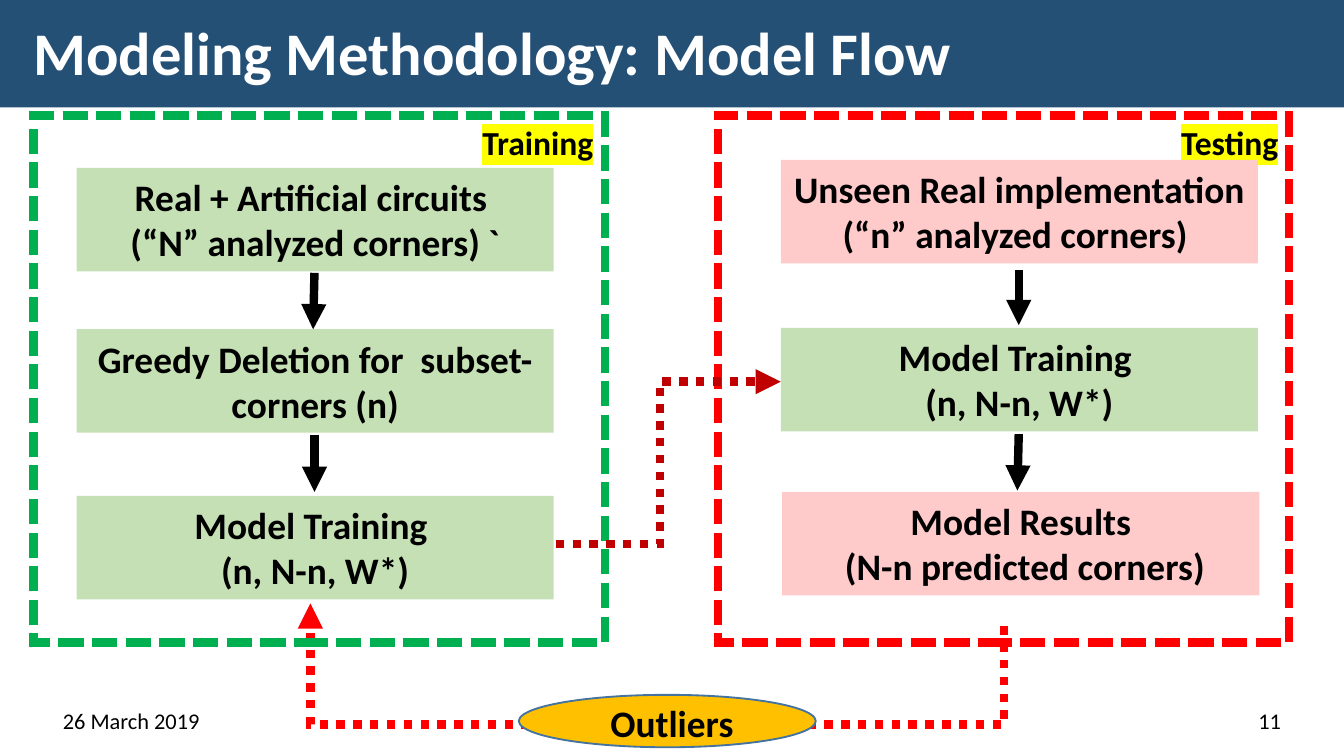
from lxml import etree
from pptx import Presentation
from pptx import util as u
from pptx.dml.color import RGBColor
from pptx.enum import dml, shapes, text
from pptx.oxml.ns import qn

PX = 9144  # EMU per px, 100 px to the inch
FONT = "Calibri"
COLORS = {
    "banner": "255076", "white": "FFFFFF", "black": "000000",
    "green": "00B050", "red": "FF0000", "dark red": "C00000",
    "pale green": "C5E0B4", "pale red": "FECACA",
    "amber": "FFC000", "blue": "43739E", "yellow": "FFFF00",
}
DASHED, DOTTED = dml.MSO_LINE.SQUARE_DOT, dml.MSO_LINE.ROUND_DOT

TITLE = "Modeling Methodology: Model Flow"
DATE, NUMBER = "26 March 2019", "11"
OUTLIERS = "Outliers"
BOX_W, BOX_H = 355, 77
FRAME_TOP, FRAME_W, FRAME_H = 86, 425, 392
# Each step: left, top, fill, lines. Each arrow: x and y of start, x and y of end
PHASES = [
    {"name": "Training", "color": "green", "left": 25, "label": (349, 103),
     "steps": [
         (57, 125, "pale green", ["Real + Artificial circuits ", "(“N” analyzed corners) `"]),
         (57, 245, "pale green", ["Greedy Deletion for  subset-corners (n)"]),
         (57, 369, "pale green", ["Model Training ", "(n, N-n, W*)"]),
     ],
     "arrows": [(234, 203, 233, 245), (234, 324, 234, 366)]},
    {"name": "Testing", "color": "red", "left": 534, "label": (869, 93),
     "steps": [
         (581, 119, "pale red", ["Unseen Real implementation", "(“n” analyzed corners) "]),
         (581, 244, "pale green", ["Model Training ", "(n, N-n, W*)"]),
         (582, 366, "pale red", ["Model Results", " (N-n predicted corners)"]),
     ],
     "arrows": [(758, 201, 758, 242), (758, 323, 757, 365)]},
]
HANDOVER = (401, 405, 581, 284)
LOOP_START, LOOP_END, LOOP_BOTTOM = (747, 466), (231, 449), 539

prs = Presentation()
prs.slide_width = 1000 * PX
prs.slide_height = prs.slide_width * 9 // 16
slide = prs.slides.add_slide(prs.slide_layouts[6])


def rgb(name):
    return RGBColor.from_string(COLORS[name])


def emu(*lengths):
    return [round(n * PX) for n in lengths]


def add_block(at, fill=None, kind=shapes.MSO_SHAPE.RECTANGLE):
    block = slide.shapes.add_shape(kind, *emu(*at))
    block.shadow.inherit = False
    block.line.fill.background()
    if fill:
        block.fill.solid()
        block.fill.fore_color.rgb = rgb(fill)
    else:
        block.fill.background()
    return block


def draw_line(line, color, width=4.5, dash=None):
    line.color.rgb = rgb(color)
    line.width = u.Pt(width)
    line.dash_style = dash
    etree.SubElement(line._get_or_add_ln(), qn("a:miter"), lim="800000")


def write(holder, lines, size, color="black", bold=True, align="LEFT",
          anchor="TOP", wrap=True):
    frame = holder.text_frame
    frame.word_wrap = wrap
    frame.vertical_anchor = text.MSO_ANCHOR[anchor]
    frame.text = "\n".join(lines)
    for paragraph in frame.paragraphs:
        paragraph.alignment = text.PP_ALIGN[align]
        font = paragraph.font
        font.name, font.size, font.bold = FONT, u.Pt(size), bold
        font.color.rgb = rgb(color)
    return frame


def add_text(at, line, size, **style):
    return write(slide.shapes.add_textbox(*emu(*at)), [line], size, **style)


def highlight(run, color):
    mark = etree.SubElement(run.font._element, qn("a:highlight"))
    etree.SubElement(mark, qn("a:srgbClr"), val=COLORS[color])


def add_arrow(kind, ends, color, dash=None):
    arrow = slide.shapes.add_connector(shapes.MSO_CONNECTOR[kind], *emu(*ends))
    draw_line(arrow.line, color, dash=dash)
    etree.SubElement(arrow.line._get_or_add_ln(), qn("a:tailEnd"), type="triangle")
    etree.SubElement(arrow._element.spPr, qn("a:effectLst"))
    return arrow


def add_loop(start, end, bottom, color):
    """Elbow that leaves downwards, runs left along bottom and ends upwards."""
    span, rise = start[0] - end[0], start[1] - end[1]
    left = (start[0] + end[0] - rise) / 2
    top = (start[1] + end[1] - span) / 2
    loop = add_arrow("ELBOW", (left, top, left + rise, top + span), color, DOTTED)
    frame = loop._element.spPr.find(qn("a:xfrm"))
    frame.set("rot", str(90 * 60000))
    frame.set("flipH", "1")
    bend = round((start[1] - bottom) / rise * 100000)
    guides = loop._element.spPr.find(qn("a:prstGeom")).get_or_add_avLst()
    etree.SubElement(guides, qn("a:gd"), name="adj1", fmla=f"val {bend}")


add_block((0, 0, 1000, 80), "banner")
add_loop(LOOP_START, LOOP_END, LOOP_BOTTOM, "red")
oval = add_block((386, 517, 221, 39), "amber", shapes.MSO_SHAPE.OVAL)
draw_line(oval.line, "blue", width=1)
heading = add_text((15, 10, 970, 63), TITLE, 32.4, color="white", anchor="MIDDLE")
heading.paragraphs[0].line_spacing = 0.9
add_text((706, 521, 257, 30), NUMBER, 12, bold=False, align="RIGHT", anchor="BOTTOM")
add_text((37, 521, 257, 30), DATE, 12, bold=False, anchor="BOTTOM")
add_text((396, 516, 208, 44), OUTLIERS, 20, align="CENTER")

for phase in PHASES:
    border = add_block((phase["left"], FRAME_TOP, FRAME_W, FRAME_H))
    draw_line(border.line, phase["color"], dash=DASHED)
    label_left, label_w = phase["label"]
    label = add_text((label_left, FRAME_TOP, label_w, 40), phase["name"], 18, wrap=False)
    label.auto_size = text.MSO_AUTO_SIZE.SHAPE_TO_FIT_TEXT
    highlight(label.paragraphs[0].runs[0], "yellow")

add_arrow("ELBOW", HANDOVER, "dark red", DOTTED)

for phase in PHASES:
    for left, top, fill, lines in phase["steps"]:
        write(add_block((left, top, BOX_W, BOX_H), fill), lines, 20, align="CENTER")
    for ends in phase["arrows"]:
        add_arrow("STRAIGHT", ends, "black")

prs.save("out.pptx")
